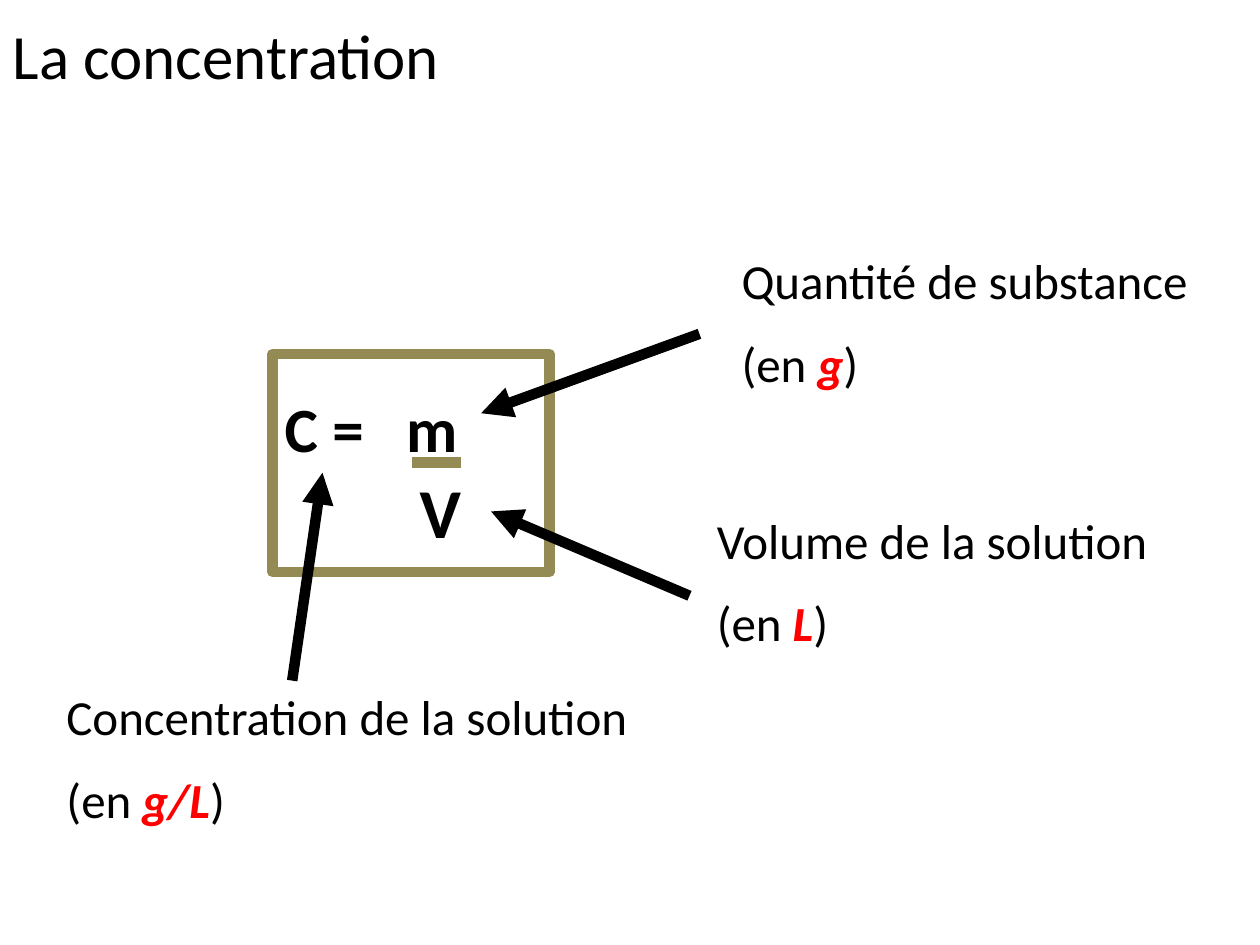
from dataclasses import dataclass

from lxml import etree
from pptx import Presentation
from pptx.dml.color import RGBColor
from pptx.enum.shapes import MSO_CONNECTOR, MSO_SHAPE
from pptx.enum.text import MSO_ANCHOR, MSO_AUTO_SIZE, PP_ALIGN
from pptx.oxml.ns import qn
from pptx.util import Cm, Pt

STRAIGHT = MSO_CONNECTOR.STRAIGHT
RECTANGLE = MSO_SHAPE.RECTANGLE
LEFT = PP_ALIGN.LEFT
MIDDLE, TOP = MSO_ANCHOR.MIDDLE, MSO_ANCHOR.TOP
NO_AUTOFIT = MSO_AUTO_SIZE.NONE
TITLE_ONLY = 5


@dataclass(frozen=True)
class Theme:
    font: str = "Calibri"
    text: RGBColor = RGBColor(0, 0, 0)
    unit: RGBColor = RGBColor(0xFF, 0, 0)
    frame: RGBColor = RGBColor(0x94, 0x8A, 0x54)
    title_size: Pt = Pt(36)
    label_size: Pt = Pt(28)
    formula_size: Pt = Pt(36)
    divisor_size: Pt = Pt(40)
    gap: Pt = Pt(13.5)
    line: Pt = Pt(6)


THEME = Theme()


def add_run(p, text, size, color=THEME.text, **formats):
    r = p.add_run()
    r.text = text
    for name, value in {"name": THEME.font, "size": size, **formats}.items():
        setattr(r.font, name, value)
    r.font.color.rgb = color


def add_text_box(s, x, y, w, h):
    tf = s.shapes.add_textbox(Cm(x), Cm(y), Cm(w), Cm(h)).text_frame
    tf.word_wrap = True
    tf.vertical_anchor = TOP
    return tf


def add_line(s, start, end, color, arrow=False):
    line = s.shapes.add_connector(STRAIGHT, *(Cm(v) for v in (*start, *end)))
    line.line.color.rgb = color
    line.line.width = THEME.line
    if arrow:
        ln = line.line._get_or_add_ln()
        etree.SubElement(ln, qn("a:tailEnd"), type="triangle")
    etree.SubElement(line._element.spPr, qn("a:effectLst"))


def add_title(s, text, x, y, w, h):
    title = s.shapes.title
    box = {"left": x, "top": y, "width": w, "height": h}
    for name, value in box.items():
        setattr(title, name, Cm(value))
    tf = title.text_frame
    tf.auto_size = NO_AUTOFIT
    tf.vertical_anchor = MIDDLE
    p = tf.paragraphs[0]
    p.alignment = LEFT
    add_run(p, text, THEME.title_size)


def add_formula(s, x, y, w, h):
    """Frame the fraction C = m / V."""
    frame = s.shapes.add_shape(RECTANGLE, Cm(x), Cm(y), Cm(w), Cm(h))
    frame.shadow.inherit = False
    frame.fill.background()
    frame.line.color.rgb = THEME.frame
    frame.line.width = THEME.line

    bar_y = y + 2.18
    p = add_text_box(s, x + 2.72, bar_y, 2, 1.96).paragraphs[0]
    add_run(p, "V", THEME.divisor_size, bold=True)
    add_line(s, (x + 2.82, bar_y), (x + 3.81, bar_y), THEME.frame)

    p = add_text_box(s, x, y + 0.58, 8.61, 1.78).paragraphs[0]
    tabs = etree.SubElement(p._p.get_or_add_pPr(), qn("a:tabLst"))
    etree.SubElement(tabs, qn("a:tab"), pos=str(Cm(2.45)), algn="l")
    add_run(p, "C =\tm", THEME.formula_size, bold=True)


def add_label(s, text, unit, x, y, w, h, start, end):
    """Name a quantity with its unit; the arrow runs between offsets from the box."""
    tf = add_text_box(s, x, y, w, h)
    add_run(tf.paragraphs[0], text, THEME.label_size)
    p = tf.add_paragraph()
    p.space_before = THEME.gap
    add_run(p, "(en ", THEME.label_size)
    add_run(p, unit, THEME.label_size, THEME.unit, bold=True, italic=True)
    add_run(p, ")", THEME.label_size)
    start, end = ((x + dx, y + dy) for dx, dy in (start, end))
    add_line(s, start, end, THEME.text, arrow=True)


def main():
    prs = Presentation()
    prs.slide_width, prs.slide_height = Cm(25.4), Cm(19.05)
    s = prs.slides.add_slide(prs.slide_layouts[TITLE_ONLY])
    add_title(s, "La concentration", 0, 0.2, 11.7, 1.78)
    add_formula(s, 5.49, 7.14, 5.59, 4.39)
    add_label(s, "Volume de la solution", "L", 14.2, 10.16, 10, 3.25,
              (-0.3, 1.85), (-4.3, 0.15))
    add_label(s, "Quantité de substance", "g", 14.7, 4.93, 10.4, 3.25,
              (-0.6, 1.8), (-5, 3.4))
    add_label(s, "Concentration de la solution", "g/L", 1.09, 13.72, 12.8, 3.25,
              (4.8, 0), (5.41, -4.19))
    prs.save("out.pptx")


if __name__ == "__main__":
    main()
